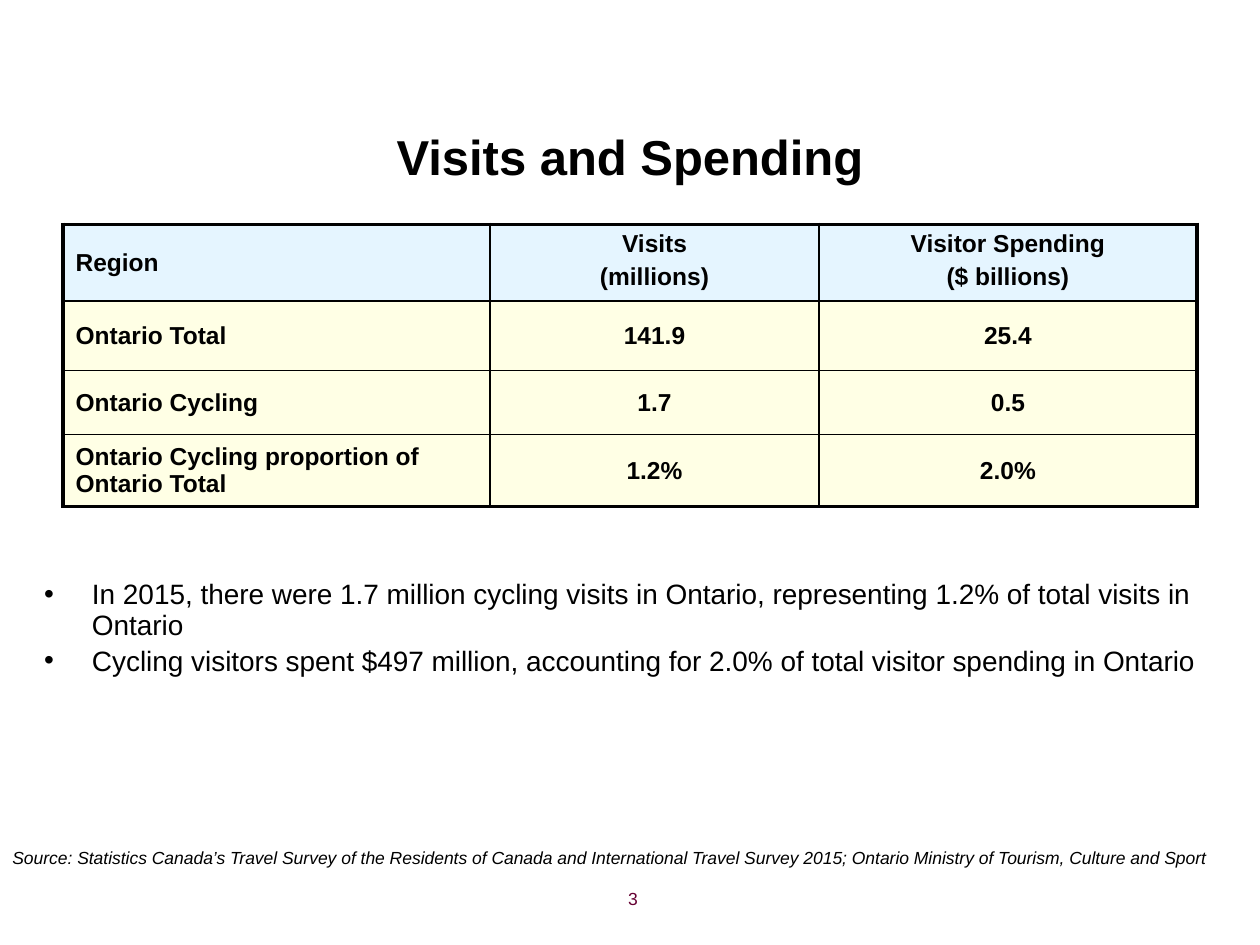
from lxml import etree
from pptx import Presentation
from pptx.dml.color import RGBColor
from pptx.enum import text as t
from pptx.oxml.ns import qn
from pptx.util import Inches, Pt

# Content
TITLE = "Visits and Spending"
ROWS = [
    ("Region", "Visits\n(millions)", "Visitor Spending\n($ billions)"),
    ("Ontario Total", "141.9", "25.4"),
    ("Ontario Cycling", "1.7", "0.5"),
    ("Ontario Cycling proportion of Ontario Total", "1.2%", "2.0%"),
]
POINTS = [
    "In 2015, there were 1.7 million cycling visits in Ontario, "
    "representing 1.2% of total visits in Ontario",
    "Cycling visitors spent $497 million, accounting for 2.0% of total "
    "visitor spending in Ontario",
]
SOURCE = ("Source: Statistics Canada’s Travel Survey of the Residents of Canada "
          "and International Travel Survey 2015; Ontario Ministry of Tourism, "
          "Culture and Sport")
PAGE = "3"

# Look
FONT = "Arial"
BLACK = RGBColor(0x00, 0x00, 0x00)
WINE = RGBColor(0x66, 0x00, 0x33)
BLUE = RGBColor(0xCC, 0xEC, 0xFF)
CREAM = RGBColor(0xFF, 0xFF, 0xCC)
WIDTHS = (3.39, 2.61, 3)
HEIGHTS = (0.61, 0.55, 0.51, 0.57)
THIN, THICK = 1, 2.25
LEFT, CENTER, RIGHT = t.PP_ALIGN.LEFT, t.PP_ALIGN.CENTER, t.PP_ALIGN.RIGHT
MIDDLE, TOP = t.MSO_ANCHOR.MIDDLE, t.MSO_ANCHOR.TOP


def place(shape, *box):
    shape.left, shape.top, shape.width, shape.height = map(Inches, box)


def style(para, size, align=LEFT, color=BLACK, bold=False, italic=False):
    para.alignment = align
    font = para.font
    font.name, font.size = FONT, Pt(size)
    font.bold, font.italic = bold, italic
    font.color.rgb = color


def paint(cell, color, edges):
    """Half-clear fill, and a black line on each side."""
    cell.fill.solid()
    cell.fill.fore_color.rgb = color
    props = cell._tc.get_or_add_tcPr()
    tint = props.find(".//" + qn("a:srgbClr"))
    etree.SubElement(tint, qn("a:alpha"), val="50000")
    for i, (side, width) in enumerate(edges.items()):
        line = etree.Element(qn("a:ln" + side), w=str(Pt(width)))
        fill = etree.SubElement(line, qn("a:solidFill"))
        etree.SubElement(fill, qn("a:srgbClr"), val=str(BLACK))
        props.insert(i, line)


def note(slide, box, words, **look):
    frame = slide.shapes.add_textbox(*map(Inches, box)).text_frame
    frame.word_wrap = True
    frame.text = words
    style(frame.paragraphs[0], 10, **look)


deck = Presentation()
deck.slide_width, deck.slide_height = Inches(10), Inches(7.5)
slide = deck.slides.add_slide(deck.slide_layouts[1])

# Title
title = slide.shapes.title
place(title, 0.5, 0.86, 9, 0.75)
title.text_frame.text = TITLE
title.text_frame.vertical_anchor = MIDDLE
style(title.text_frame.paragraphs[0], 28, CENTER, bold=True)

# Bullet list
body = slide.placeholders[1]
place(body, 0.25, 4.56, 9.5, 1.85)
frame = body.text_frame
frame.text = "\n".join(POINTS)
frame.auto_size = t.MSO_AUTO_SIZE.NONE
for i, para in enumerate(frame.paragraphs):
    props = para._p.get_or_add_pPr()
    props.set("marL", str(Inches(0.38)))
    props.set("indent", str(-Inches(0.38)))
    etree.SubElement(props, qn("a:buChar"), char="•")
    para.line_spacing = 0.9
    para.space_before = Pt(3.2 if i else 0)
    style(para, 16)

# Table
last_row, last_col = len(ROWS) - 1, len(WIDTHS) - 1
grid = slide.shapes.add_table(
    len(ROWS), len(WIDTHS), Inches(0.5), Inches(1.78),
    Inches(sum(WIDTHS)), Inches(sum(HEIGHTS))).table
for col, width in zip(grid.columns, WIDTHS):
    col.width = Inches(width)
for r, row in enumerate(ROWS):
    grid.rows[r].height = Inches(HEIGHTS[r])
    for c, words in enumerate(row):
        cell = grid.cell(r, c)
        cell.text = words
        cell.vertical_anchor = TOP if r == 0 and c else MIDDLE
        pad = 0 if r and c else 0.1
        cell.margin_left = cell.margin_right = Inches(pad)
        cell.margin_top = cell.margin_bottom = Inches(pad / 2)
        for i, para in enumerate(cell.text_frame.paragraphs):
            para.space_before = Pt(2.8 if i else 0)
            style(para, 14, CENTER if c else LEFT, bold=True)
        paint(cell, CREAM if r else BLUE, {
            "L": THIN if c else THICK,
            "R": THICK if c == last_col else THIN,
            "T": THIN if r else THICK,
            "B": THICK if r == last_row else THIN})

# Source and page number
note(slide, (0, 6.67, 9.8, 0.27), SOURCE, italic=True)
note(slide, (2.83, 7, 2.33, 0.35), PAGE, align=RIGHT, color=WINE)

deck.save("out.pptx")
